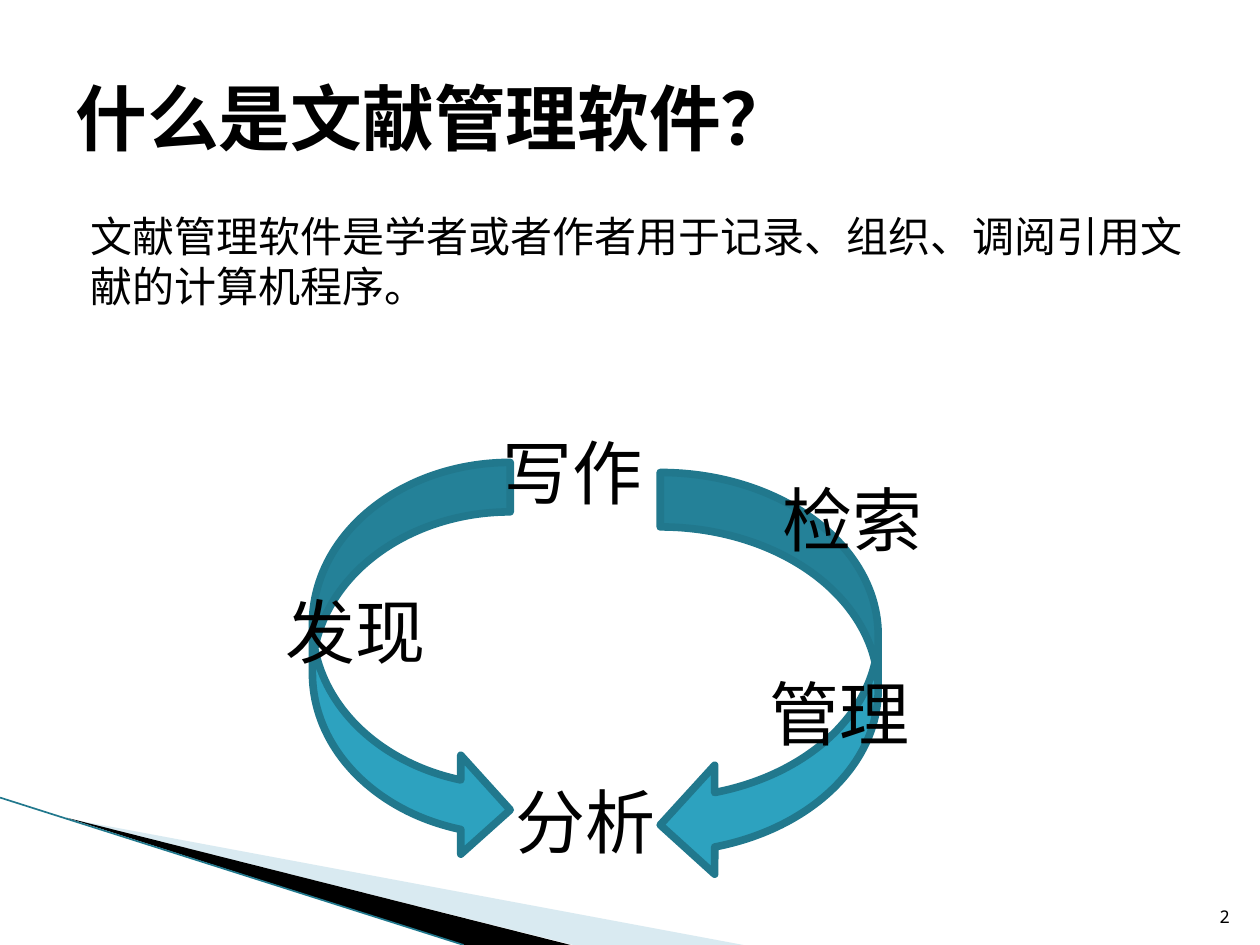
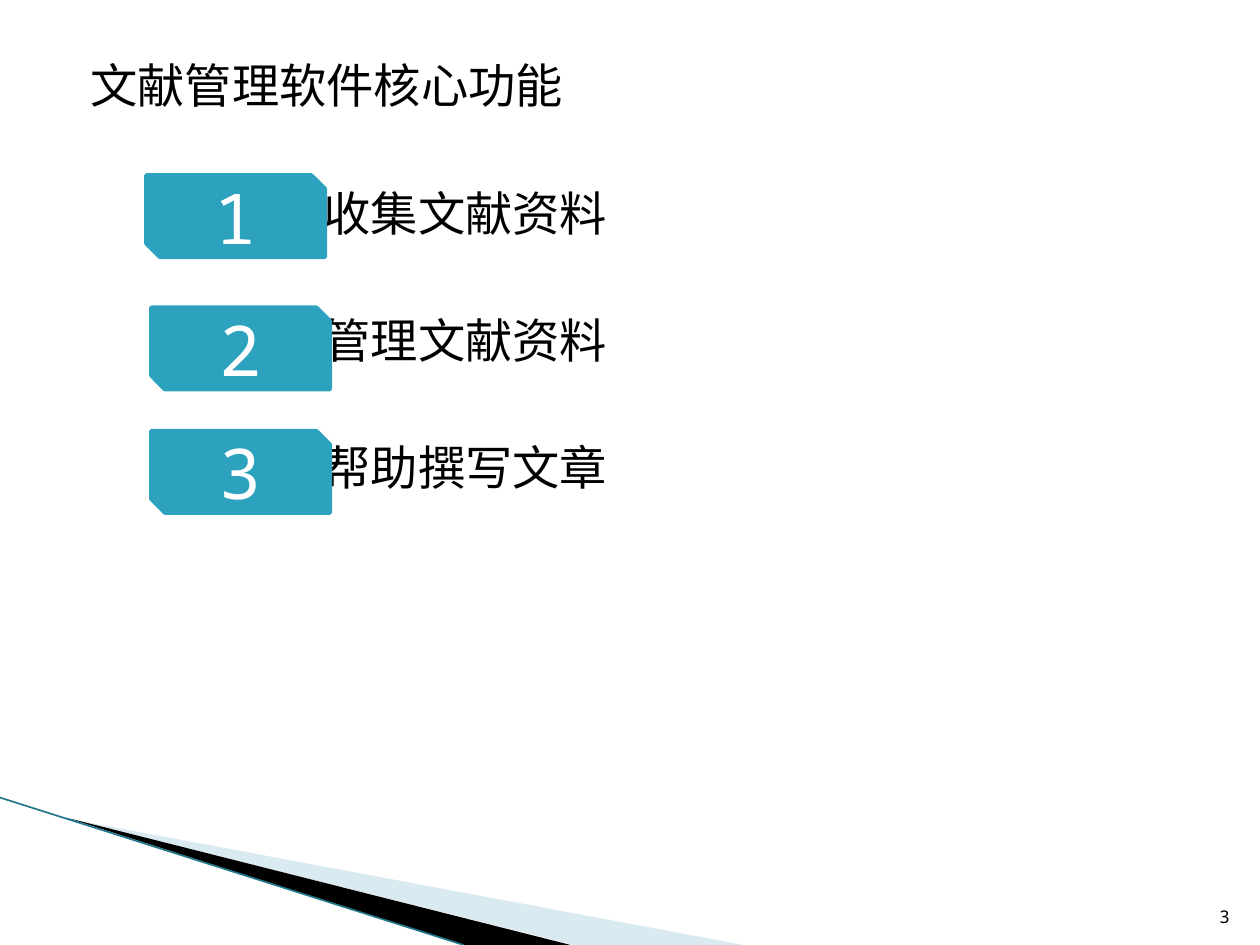
from lxml import etree
from pptx import Presentation
from pptx.dml.color import RGBColor
from pptx.enum.shapes import MSO_CONNECTOR, MSO_SHAPE
from pptx.enum.text import MSO_ANCHOR, PP_ALIGN
from pptx.oxml.ns import qn
from pptx.util import Inches, Pt

TOP, MIDDLE, BOTTOM = MSO_ANCHOR.TOP, MSO_ANCHOR.MIDDLE, MSO_ANCHOR.BOTTOM
LEFT, CENTER, RIGHT = PP_ALIGN.LEFT, PP_ALIGN.CENTER, PP_ALIGN.RIGHT
LEFT_CURVE, RIGHT_CURVE = MSO_SHAPE.CURVED_RIGHT_ARROW, MSO_SHAPE.CURVED_LEFT_ARROW
SNIPPED = MSO_SHAPE.SNIP_2_DIAG_RECTANGLE
STRAIGHT = MSO_CONNECTOR.STRAIGHT

FONT = "Noto Sans Mono"
BLACK, WHITE = "000000", "FFFFFF"
TEAL, DARK_TEAL, PALE_BLUE = "2DA2BF", "21788D", "A0CBDC"
WIDTH, HEIGHT = 10, 7.5
BODY_INDENT = 0.12


def color(value):
    return RGBColor.from_string(value)


def style_paragraph(paragraph, text, size, ink=BLACK, bold=False, align=LEFT):
    paragraph.alignment = align
    run = paragraph.add_run()
    run.text = text
    formats = {"name": FONT, "size": Pt(size), "bold": bold}
    for key, value in formats.items():
        setattr(run.font, key, value)
    run.font.color.rgb = color(ink)


def add_text(slide, box, text, size, anchor=TOP, wrap=True, **formats):
    frame = slide.shapes.add_textbox(*map(Inches, box)).text_frame
    frame.word_wrap = wrap
    frame.vertical_anchor = anchor
    style_paragraph(frame.paragraphs[0], text, size, **formats)
    return frame


def indent(paragraph, inches):
    properties = paragraph._p.get_or_add_pPr()
    properties.set("marL", str(Inches(inches)))
    properties.set("indent", "0")


def add_shape(slide, kind, box, outline, weight):
    shape = slide.shapes.add_shape(kind, *map(Inches, box))
    shape.shadow.inherit = False
    shape.fill.solid()
    shape.fill.fore_color.rgb = color(TEAL)
    shape.line.color.rgb = color(outline)
    shape.line.width = Pt(weight)
    return shape


def add_wedge(slide, points, fill, opacity=100):
    start, *rest = [(Inches(x), Inches(y)) for x, y in points]
    builder = slide.shapes.build_freeform(*start)
    builder.add_line_segments(rest, close=True)
    wedge = builder.convert_to_shape()
    wedge.shadow.inherit = False
    wedge.fill.solid()
    wedge.fill.fore_color.rgb = color(fill)
    wedge.line.fill.background()
    if opacity < 100:
        tone = wedge.fill._xPr.find(qn("a:solidFill"))[0]
        etree.SubElement(tone, qn("a:alpha")).set("val", str(opacity * 1000))


def add_corner(slide):
    add_wedge(slide, [(0.55, 6.5), (5.9, HEIGHT), (4.55, HEIGHT)], PALE_BLUE, 40)
    add_wedge(slide, [(0.53, 6.49), (4.53, HEIGHT), (3.68, HEIGHT)], BLACK)
    ends = [Inches(length) for length in (0, 6.33, 3.68, HEIGHT)]
    edge = slide.shapes.add_connector(STRAIGHT, *ends)
    edge.line.color.rgb = color(DARK_TEAL)
    edge.line.width = Pt(0.95)
    etree.SubElement(edge._element.spPr, qn("a:effectLst"))


def add_page(deck, number):
    slide = deck.slides.add_slide(deck.slide_layouts[6])
    add_corner(slide)
    add_text(slide, (9.46, 7.01, 0.4, 0.4), str(number), 10, BOTTOM, align=RIGHT)
    return slide


def add_cycle(slide, box):
    left, top, width, height = box
    add_shape(slide, LEFT_CURVE, (left, top, 1.57, height - 0.16), DARK_TEAL, 4.33)
    add_shape(slide, RIGHT_CURVE, (left + width - 1.73, top + 0.08, 1.73, height - 0.08),
              DARK_TEAL, 4.33)
    steps = {
        "发现": (-0.31, 0.95),
        "写作": (1.41, -0.31),
        "分析": (1.51, 2.46),
        "管理": (3.53, 1.6),
        "检索": (3.63, 0.06),
    }
    for step, (x, y) in steps.items():
        add_text(slide, (left + x, top + y, 1.31, 0.77), step, 40, wrap=False)


def add_functions(slide, box, heading, functions):
    left, top, _, _ = box
    body = add_text(slide, box, heading, 27)
    indent(body.paragraphs[0], BODY_INDENT)
    for function in functions:
        paragraph = body.add_paragraph()
        indent(paragraph, 1.97)
        paragraph.space_before = Pt(40.3)
        style_paragraph(paragraph, function, 27)
    badges = [(0.66, 0.99), (0.7, 2.04), (0.7, 3.02)]
    for number, (x, y) in enumerate(badges, 1):
        badge = add_shape(slide, SNIPPED, (left + x, top + y, 1.42, 0.65), TEAL, 2.25)
        frame = badge.text_frame
        frame.vertical_anchor = MIDDLE
        style_paragraph(frame.paragraphs[0], str(number), 40, WHITE, align=CENTER)


def build_definition(deck):
    slide = add_page(deck, 2)
    add_text(slide, (0.5, 0.3, 9, 1.25), "什么是文献管理软件？", 41, MIDDLE, bold=True)
    definition = add_text(
        slide, (0.5, 1.62, 9, 1),
        "文献管理软件是学者或者作者用于记录、组织、调阅引用文献的计算机程序。", 24)
    indent(definition.paragraphs[0], BODY_INDENT)
    add_cycle(slide, (2.48, 3.67, 4.49, 3.31))


def build_core_functions(deck):
    slide = add_page(deck, 3)
    add_functions(slide, (0.5, 0.4, 9, 6.17), "文献管理软件核心功能",
                  ["收集文献资料", "管理文献资料", "帮助撰写文章"])


def main():
    deck = Presentation()
    deck.slide_width, deck.slide_height = Inches(WIDTH), Inches(HEIGHT)
    build_definition(deck)
    build_core_functions(deck)
    deck.save("out.pptx")


if __name__ == "__main__":
    main()
